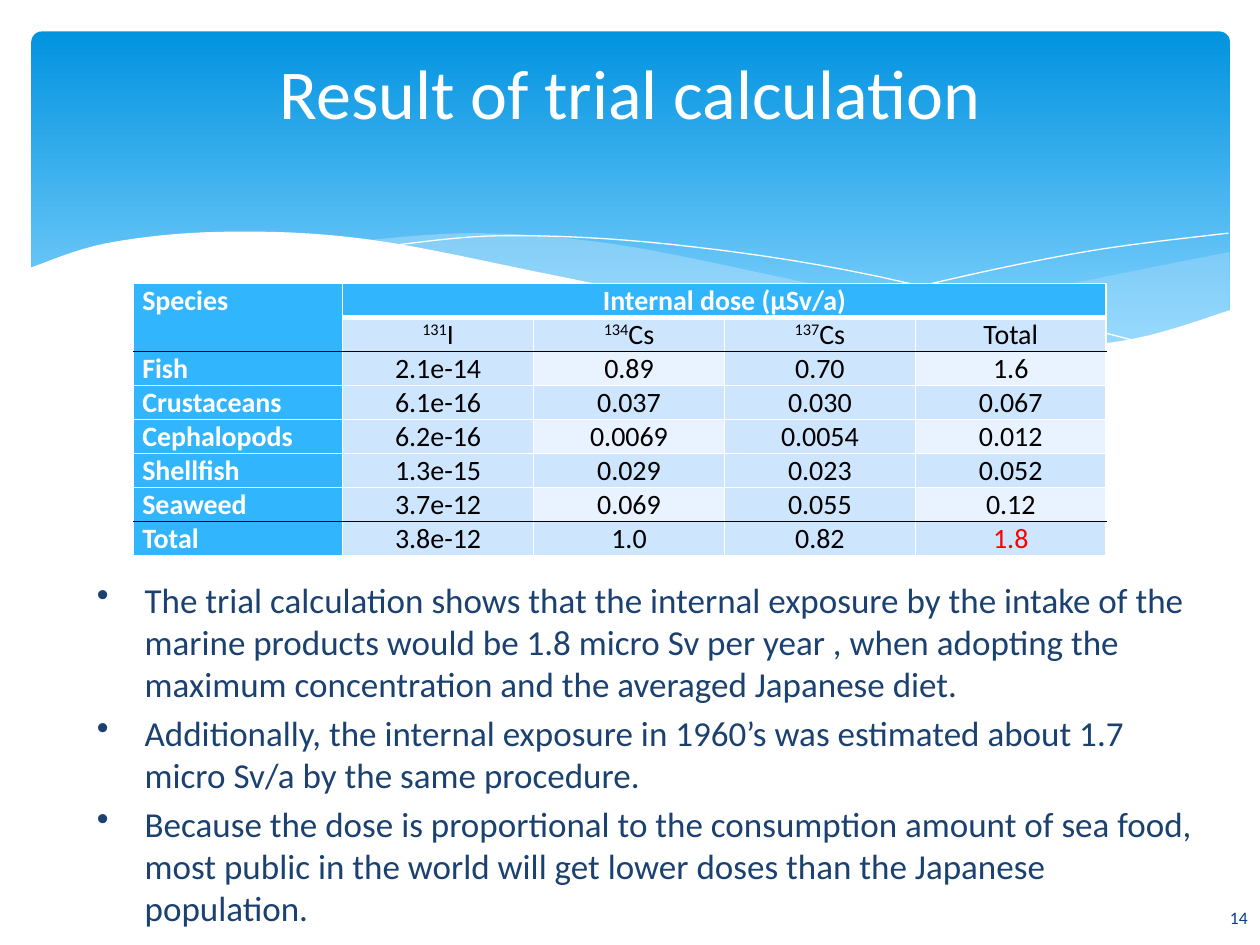
import pptx
import pptx.util
import pptx.dml.color
import pptx.enum.shapes
import pptx.enum.text
import lxml.etree
from dataclasses import dataclass

Inches = pptx.util.Inches
Pt = pptx.util.Pt
Align = pptx.enum.text.PP_ALIGN
Anchor = pptx.enum.text.MSO_ANCHOR


@dataclass(frozen=True)
class Theme:
    font: str = "Calibri"
    white: str = "FFFFFF"
    black: str = "000000"
    red: str = "FF0000"
    navy: str = "1B4171"
    page: str = "073E87"
    top: str = "0293E0"
    low: str = "83D3FE"
    mist: str = "C6E7FC"
    head: str = "31B6FD"
    band: str = "CEE5FE"
    pale: str = "E8F3FF"
    title: int = 40
    body: int = 20
    cell: int = 16
    small: int = 10


T = Theme()

TITLE = "Result of trial calculation"
PAGE = "14"
POINTS = [
    "The trial calculation shows that the internal exposure by the intake of the marine products would be 1.8 micro Sv per year , when adopting the maximum concentration and the averaged Japanese diet.",
    "Additionally, the internal exposure in 1960’s was estimated about 1.7 micro Sv/a by the same procedure.",
    "Because the dose is proportional to the consumption amount of sea food, most public in the world will get lower doses than the Japanese population.",
]
ROWS = [
    ["Species", "Internal dose (μSv/a)", "", "", ""],
    ["", ("131", "I"), ("134", "Cs"), ("137", "Cs"), "Total"],
    ["Fish", "2.1e-14", "0.89", "0.70", "1.6"],
    ["Crustaceans", "6.1e-16", "0.037", "0.030", "0.067"],
    ["Cephalopods", "6.2e-16", "0.0069", "0.0054", "0.012"],
    ["Shellfish", "1.3e-15", "0.029", "0.023", "0.052"],
    ["Seaweed", "3.7e-12", "0.069", "0.055", "0.12"],
    ["Total", "3.8e-12", "1.0", "0.82", "1.8"],
]
COLS = [1.66] + [1.515] * 4
HIGH = 0.27
RULES = (2, 7)

WAVES = [
    ([[(9.76, 2), (8.61, 2.23), (6.61, 2.65)],
      [(6.61, 2.65), (8.03, 2.78), (8.97, 2.7), (9.76, 2.47)]], T.mist, 29),
    ([[(8.93, 2.73), (7.75, 2.54), (6.29, 2.22), (4.89, 1.94), (3.8, 1.85), (2.86, 1.91)],
      [(2.86, 1.91), (4.49, 2.22), (6.01, 2.55), (7.22, 2.74), (8.18, 2.78), (8.93, 2.73)]],
     T.mist, 40),
    ([[(3.09, 1.95), (4.01, 1.87), (5.33, 1.94), (6.95, 2.19), (9.07, 2.72)]], None, 0),
    ([[(6.13, 2.57), (7.48, 2.23), (8.66, 1.99), (9.75, 1.85)]], None, 0),
    ([[(9.77, 2.46), (8.99, 2.69), (8.09, 2.77), (6.68, 2.65), (4.47, 2.2),
       (2.92, 1.9), (1.77, 1.84), (0.85, 1.93), (0.23, 2.13)],
      [(0.23, 3.29), (9.77, 3.29)]], T.white, 100),
]
STEPS = 8


def rgb(code):
    return pptx.dml.color.RGBColor.from_string(code)


def add(node, tag, **attrs):
    name = pptx.oxml.ns.qn("a:" + tag)
    return lxml.etree.SubElement(node, name, **attrs)


def style(para, size, color, align=Align.LEFT, bold=False):
    font = para.font
    font.name, font.size, font.bold = T.font, Pt(size), bold
    font.color.rgb = rgb(color)
    para.alignment = align


def paint(shape, color, alpha=100):
    shape.fill.solid()
    shape.fill.fore_color.rgb = rgb(color)
    if alpha < 100:
        tint = shape.fill._xPr.find(".//" + pptx.oxml.ns.qn("a:srgbClr"))
        add(tint, "alpha", val=str(alpha * 1000))


def blend(a, b, c, d, t):
    bend = (c - a) * t + (2 * a - 5 * b + 4 * c - d) * t**2
    return b + (bend + (3 * b - a - 3 * c + d) * t**3) / 2


def smooth(knots):
    ends = [knots[0], *knots, knots[-1]]
    dots = [knots[0]]
    for four in zip(ends, ends[1:], ends[2:], ends[3:]):
        for step in range(1, STEPS + 1):
            dots.append(tuple(blend(*axis, step / STEPS) for axis in zip(*four)))
    return dots


def wave(slide, strokes, color, alpha):
    dots = [dot for knots in strokes for dot in smooth(knots)]
    start, *rest = [(Inches(x), Inches(y)) for x, y in dots]
    pen = slide.shapes.build_freeform(*start)
    pen.add_line_segments(rest, close=color is not None)
    shape = pen.convert_to_shape()
    shape.shadow.inherit = False
    if color:
        paint(shape, color, alpha)
        shape.line.fill.background()
    else:
        shape.fill.background()
        shape.line.color.rgb = rgb(T.white)
        shape.line.width = Pt(0)


def banner(slide):
    kind = pptx.enum.shapes.MSO_SHAPE.ROUNDED_RECTANGLE
    box = slide.shapes.add_shape(kind, *map(Inches, (0.25, 0.25, 9.51, 2.7)))
    box.adjustments[0] = 0.03
    box.shadow.inherit = False
    box.line.fill.background()
    box.fill.gradient()
    box.fill.gradient_angle = 270
    for stop, color, spot in zip(box.fill.gradient_stops, (T.top, T.low), (0, 0.9)):
        stop.color.rgb = rgb(color)
        stop.position = spot
    for item in WAVES:
        wave(slide, *item)


def text(slide, place, lines, size, color, align=Align.LEFT, anchor=Anchor.MIDDLE):
    frame = slide.shapes.add_textbox(*map(Inches, place)).text_frame
    frame.word_wrap = True
    frame.vertical_anchor = anchor
    frame.text = "\n".join(lines)
    for para in frame.paragraphs:
        style(para, size, color, align)
    return frame


def bullet(para):
    para.space_before = Pt(4)
    props = para._p.get_or_add_pPr()
    props.set("marL", str(Inches(0.38)))
    props.set("indent", str(-Inches(0.38)))
    mark = add(props, "buChar", char="•")
    props.find(pptx.oxml.ns.qn("a:defRPr")).addprevious(mark)


def edge(cell, row, col):
    def rule(line):
        if line in RULES:
            return T.black, 1
        return T.white, 3 if line == 1 and col else 1

    last = row + cell.span_height if cell.is_merge_origin else row + 1
    sides = {"lnL": (T.white, 1), "lnR": (T.white, 1),
             "lnT": rule(row), "lnB": rule(last)}
    props = cell._tc.get_or_add_tcPr()
    for tag, (color, wide) in sides.items():
        line = add(props, tag, w=str(Pt(wide)))
        add(add(line, "solidFill"), "srgbClr", val=color)


def fill(cell, row, col, value):
    cell.margin_left = cell.margin_right = Inches(0.07)
    cell.margin_top = cell.margin_bottom = 0
    if row < 2 and col:
        cell.vertical_anchor = Anchor.MIDDLE
    edge(cell, row, col)
    head = row == 0 or col == 0
    light = row > 1 and col > 0 and row % 2 == col % 2 == 0
    paint(cell, T.head if head else T.pale if light else T.band)
    para = cell.text_frame.paragraphs[0]
    final = (row, col) == (len(ROWS) - 1, len(COLS) - 1)
    color = T.white if head else T.red if final else T.black
    style(para, T.cell, color, Align.CENTER if col else Align.LEFT, head)
    if isinstance(value, tuple):
        for part, shift in zip(value, ("30000", "0")):
            run = para.add_run()
            run.text = part
            run._r.get_or_add_rPr().set("baseline", shift)
    elif value:
        para.add_run().text = value


def grid(slide):
    place = (1.06, 2.25, sum(COLS), HIGH * len(ROWS))
    table = slide.shapes.add_table(len(ROWS), len(COLS), *map(Inches, place)).table
    table.first_row = table.horz_banding = False
    for col, wide in zip(table.columns, COLS):
        col.width = Inches(wide)
    for row in table.rows:
        row.height = Inches(HIGH)
    table.cell(0, 0).merge(table.cell(1, 0))
    table.cell(0, 1).merge(table.cell(0, 4))
    for r, row in enumerate(ROWS):
        for c, value in enumerate(row):
            fill(table.cell(r, c), r, c, value)


def main():
    deck = pptx.Presentation()
    deck.slide_width, deck.slide_height = Inches(10), Inches(7.5)
    slide = deck.slides.add_slide(deck.slide_layouts[6])
    banner(slide)
    text(slide, (8.73, 7.08, 1.27, 0.4), [PAGE], T.small, T.page, Align.RIGHT)
    text(slide, (0.5, 0.29, 9, 0.87), [TITLE], T.title, T.white, Align.CENTER)
    body = text(slide, (0.67, 4.54, 9, 2.78), POINTS, T.body, T.navy, anchor=Anchor.TOP)
    for para in body.paragraphs:
        bullet(para)
    grid(slide)
    deck.save("out.pptx")


if __name__ == "__main__":
    main()
